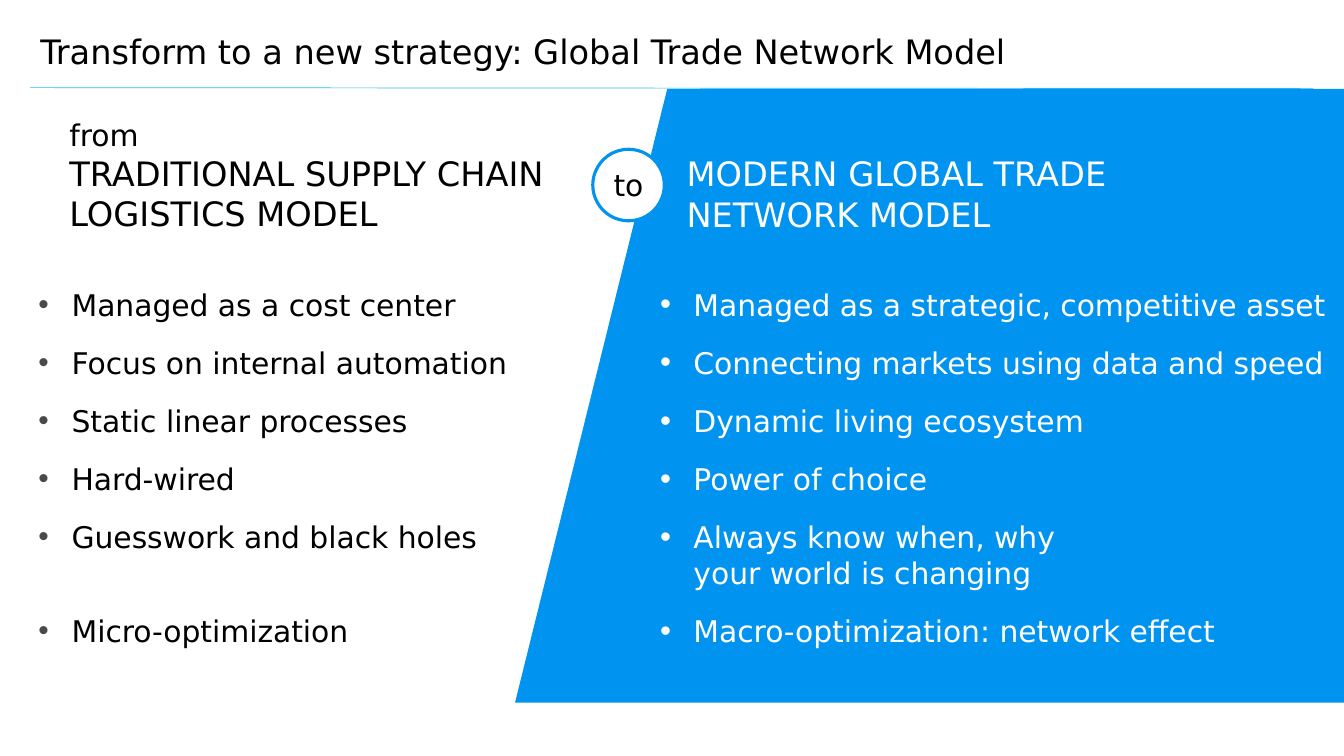
from collections import namedtuple

from lxml import etree
from pptx import Presentation
from pptx.dml.color import RGBColor
from pptx.enum.shapes import MSO_CONNECTOR, MSO_SHAPE
from pptx.enum.text import MSO_ANCHOR, MSO_AUTO_SIZE, PP_ALIGN
from pptx.oxml.ns import qn
from pptx.util import Pt

STRAIGHT = MSO_CONNECTOR.STRAIGHT
PARALLELOGRAM, OVAL = MSO_SHAPE.PARALLELOGRAM, MSO_SHAPE.OVAL
TOP, MIDDLE, BOTTOM = MSO_ANCHOR.TOP, MSO_ANCHOR.MIDDLE, MSO_ANCHOR.BOTTOM
LEFT, CENTER = PP_ALIGN.LEFT, PP_ALIGN.CENTER
FIXED = MSO_AUTO_SIZE.NONE

FONT = "DejaVu Sans"
LARGE, SMALL = 24, 21.3
COLORS = {"text": "000000", "white": "FFFFFF", "blue": "0093F0",
          "rule": "31BCF7", "bullet": "4B4A4A"}
ITEM_GAP = 16
EXTRA_LINE = 25.5
INDENT = 23.76

Box = namedtuple("Box", "left top width height")

OLD_ITEMS = ["Managed as a cost center", "Focus on internal automation",
             "Static linear processes", "Hard-wired",
             "Guesswork and black holes", "Micro-optimization"]
NEW_ITEMS = ["Managed as a strategic, competitive asset",
             "Connecting markets using data and speed",
             "Dynamic living ecosystem", "Power of choice",
             "Always know when, why\nyour world is changing",
             "Macro-optimization: network effect"]


def color(name):
    return RGBColor.from_string(COLORS[name])


def place(shape, box):
    shape.left, shape.top, shape.width, shape.height = map(Pt, box)


def set_frame(shape, inset_x, inset_y, anchor=TOP, wrap=True):
    frame = shape.text_frame
    frame.auto_size = FIXED
    frame.word_wrap = wrap
    frame.vertical_anchor = anchor
    frame.margin_left = frame.margin_right = Pt(inset_x)
    frame.margin_top = frame.margin_bottom = Pt(inset_y)
    return frame


def add_span(para, text, size, ink):
    span = para.add_run()
    span.text = text
    span.font.name = FONT
    span.font.size = Pt(size)
    span.font.color.rgb = color(ink)


def add_plain_shape(page, kind, box, fill):
    shape = page.shapes.add_shape(kind, *map(Pt, box))
    shape.shadow.inherit = False
    shape.fill.solid()
    shape.fill.fore_color.rgb = color(fill)
    shape.line.fill.background()
    return shape


def send_to_back(page, shape):
    page.shapes._spTree.insert(2, shape._element)


def add_title(page, box):
    title = page.shapes.title
    place(title, box)
    para = set_frame(title, 7.2, 3.6, BOTTOM).paragraphs[0]
    para.alignment = LEFT
    para.line_spacing = 0.95
    add_span(para, "Transform to a new strategy: Global Trade Network Model",
             LARGE, "text")


def add_rule(page, box):
    rule = page.shapes.add_connector(
        STRAIGHT, Pt(box.left), Pt(box.top),
        Pt(box.left + box.width), Pt(box.top + box.height))
    rule.line.color.rgb = color("rule")
    rule.line.width = Pt(0.5)
    etree.SubElement(rule._element.spPr, qn("a:effectLst"))
    send_to_back(page, rule)


def add_panel(page, box):
    panel = add_plain_shape(page, PARALLELOGRAM, box, "blue")
    panel.adjustments[0] = 0.248
    send_to_back(page, panel)


def add_heading(page, box, inset_x, inset_y, text, ink, lead=None):
    heading = page.shapes.add_textbox(*map(Pt, box))
    para = set_frame(heading, inset_x, inset_y).paragraphs[0]
    if lead:
        add_span(para, lead, SMALL, ink)
        para.add_line_break()
    add_span(para, text, LARGE, ink)


def add_bullet(para, ink, percent):
    props = para._p.get_or_add_pPr()
    props.set("marL", str(Pt(INDENT)))
    props.set("indent", str(-Pt(INDENT)))
    tint = etree.SubElement(props, qn("a:buClr"))
    etree.SubElement(tint, qn("a:srgbClr"), val=COLORS[ink])
    etree.SubElement(props, qn("a:buSzPct"), val=str(percent * 1000))
    etree.SubElement(props, qn("a:buFont"), typeface="Arial")
    etree.SubElement(props, qn("a:buChar"), char="•")


def add_list(body, box, items, ink, bullet_ink, percent, wide_gap_after=None):
    place(body, box)
    frame = set_frame(body, 0, 0)
    for index, item in enumerate(items):
        para = frame.add_paragraph() if index else frame.paragraphs[0]
        add_bullet(para, bullet_ink, percent)
        para.alignment = LEFT
        para.space_before = Pt(0)
        # Keeps the last items of both lists level
        extra = EXTRA_LINE if index == wide_gap_after else 0
        para.space_after = Pt(ITEM_GAP + extra)
        for number, line in enumerate(item.split("\n")):
            if number:
                para.add_line_break()
            add_span(para, line, SMALL, ink)


def add_badge(page, box):
    circle = add_plain_shape(page, OVAL, box, "white")
    circle.line.color.rgb = color("blue")
    circle.line.width = Pt(2.25)
    width, height = 36, 33
    label_box = Box(box.left + (box.width - width) / 2,
                    box.top + (box.height - height) / 2, width, height)
    label = page.shapes.add_textbox(*map(Pt, label_box))
    para = set_frame(label, 7.2, 3.6, MIDDLE, wrap=False).paragraphs[0]
    para.alignment = CENTER
    add_span(para, "to", SMALL, "text")


def add_comparison(deck):
    page = deck.slides.add_slide(deck.slide_layouts[3])
    old_body, new_body = page.placeholders[1], page.placeholders[2]
    # Backdrop and title
    add_panel(page, Box(367.9, 63.4, 983.5, 438.5))
    add_rule(page, Box(21.6, 62.6, 916.6, 0.7))
    add_title(page, Box(21.6, 9.4, 916.6, 46))
    # Headings
    add_heading(page, Box(481, 104.4, 370, 67), 9.4, 5,
                "MODERN GLOBAL TRADE NETWORK MODEL", "white")
    add_heading(page, Box(30.2, 74.2, 440.6, 75.6), 19.4, 9.4,
                "TRADITIONAL SUPPLY CHAIN LOGISTICS MODEL", "text", "from")
    # Lists
    add_list(old_body, Box(27.4, 204.5, 388, 203), OLD_ITEMS,
             "text", "bullet", 100, wide_gap_after=4)
    add_list(new_body, Box(471.6, 204.5, 500.4, 203), NEW_ITEMS,
             "white", "white", 105)
    # Badge between the two models
    add_badge(page, Box(423.4, 106.6, 51.1, 51.1))


def main():
    deck = Presentation()
    deck.slide_width, deck.slide_height = Pt(960), Pt(540)
    add_comparison(deck)
    deck.save("out.pptx")


if __name__ == "__main__":
    main()
